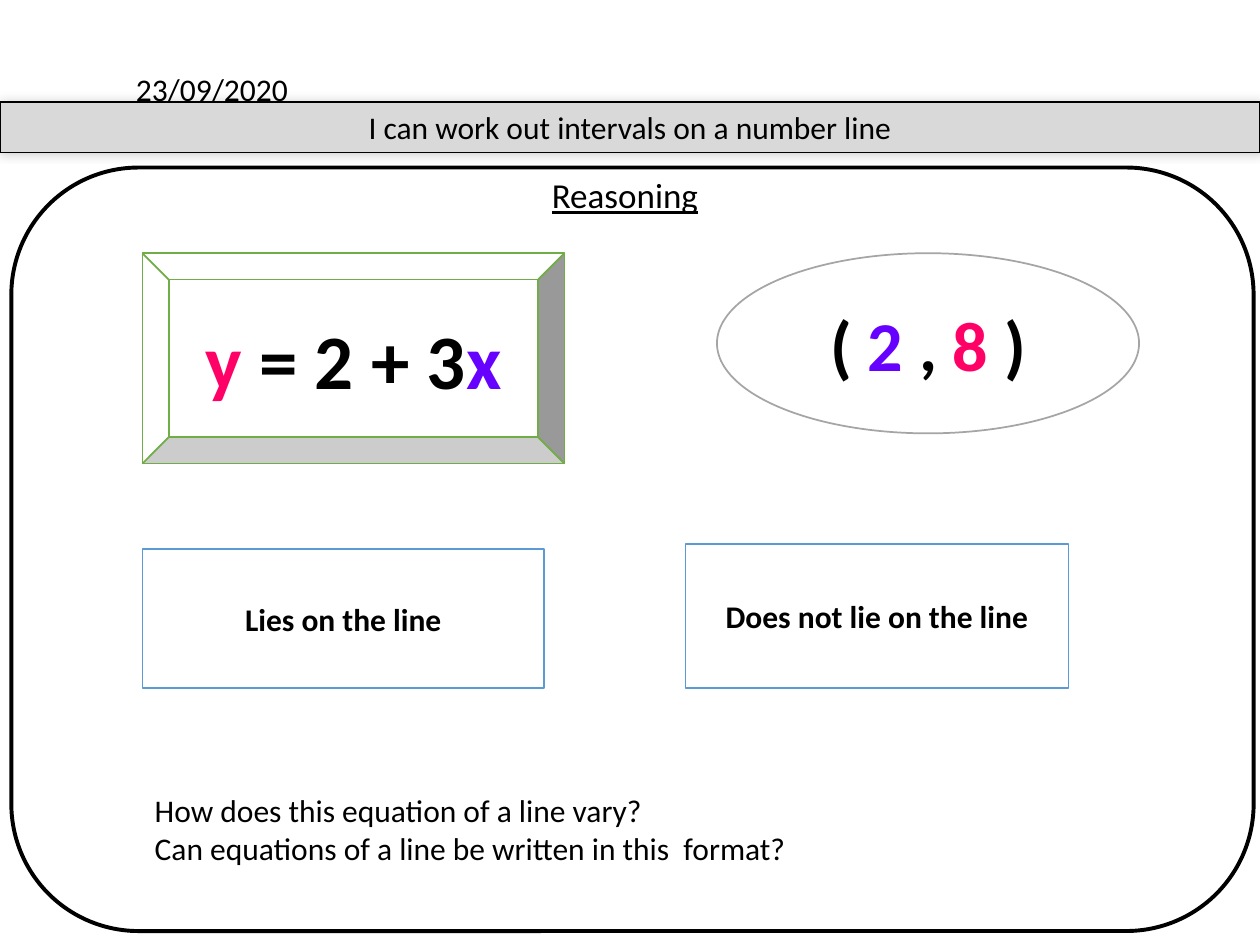
import pptx
import pptx.util
import pptx.dml.color
import pptx.enum.shapes
import pptx.enum.text
import pptx.oxml
import pptx.oxml.ns
from dataclasses import dataclass

Inches = pptx.util.Inches
Pt = pptx.util.Pt
Shape = pptx.enum.shapes.MSO_SHAPE
Align = pptx.enum.text.PP_ALIGN
Anchor = pptx.enum.text.MSO_ANCHOR


@dataclass(frozen=True)
class Theme:
    font: str = "Calibri"
    ink: str = "000000"
    paper: str = "FFFFFF"
    band: str = "D9D9D9"
    y_color: str = "FF0066"
    x_color: str = "6600FF"
    equation_line: str = "70AD47"
    point_line: str = "A5A5A5"
    answer_line: str = "5B9BD5"
    body: int = 18
    heading: int = 20
    point: int = 40
    equation: int = 44


class SlideBuilder:
    def __init__(self, prs, theme):
        self.theme = theme
        self.s = prs.slides.add_slide(prs.slide_layouts[6])

    def fill_text(self, sp, paragraphs, size, align=Align.LEFT, anchor=Anchor.TOP, wrap=True, **font):
        tf = sp.text_frame
        tf.word_wrap = wrap
        tf.vertical_anchor = anchor
        formats = {"name": self.theme.font, "size": Pt(size), **font}
        for i, runs in enumerate(paragraphs):
            p = tf.paragraphs[0] if i == 0 else tf.add_paragraph()
            p.alignment = align
            for text, color in runs:
                r = p.add_run()
                r.text = text
                for name, value in formats.items():
                    setattr(r.font, name, value)
                r.font.color.rgb = pptx.dml.color.RGBColor.from_string(color)

    def text(self, box, lines, size, **options):
        sp = self.s.shapes.add_textbox(*map(Inches, box))
        self.fill_text(sp, [[(line, self.theme.ink)] for line in lines], size, **options)

    def shape(self, kind, box, line, width=1, fill=None):
        sp = self.s.shapes.add_shape(kind, *map(Inches, box))
        sp.shadow.inherit = False
        if fill:
            sp.fill.solid()
            sp.fill.fore_color.rgb = pptx.dml.color.RGBColor.from_string(fill)
        else:
            sp.fill.background()
        sp.line.color.rgb = pptx.dml.color.RGBColor.from_string(line)
        sp.line.width = Pt(width)
        return sp

    def card(self, kind, box, line, runs, size):
        sp = self.shape(kind, box, line, fill=self.theme.paper)
        self.fill_text(sp, [runs], size, Align.CENTER, Anchor.MIDDLE, False, bold=True)

    def band(self, box, text):
        t = self.theme
        sp = self.shape(Shape.RECTANGLE, box, t.ink, 0.75, t.band)
        effects = sp._element.spPr.find(pptx.oxml.ns.qn("a:effectLst"))
        effects.append(pptx.oxml.parse_xml(
            f'<a:outerShdw {pptx.oxml.ns.nsdecls("a")} blurRad="{Pt(6)}" dist="0" dir="18900000">'
            f'<a:srgbClr val="{t.ink}"><a:alpha val="20000"/></a:srgbClr></a:outerShdw>'))
        self.fill_text(sp, [[(text, t.ink)]], t.body, Align.CENTER)


def main():
    prs = pptx.Presentation()
    prs.slide_width, prs.slide_height = Inches(10), Inches(7.5)
    t = Theme()
    b = SlideBuilder(prs, t)

    b.text((0.98, 0.51, 1.42, 0.4), ["23/09/2020"], t.body, wrap=False)
    b.text((-0.04, 1.33, 10, 0.44), ["Reasoning"], t.heading, align=Align.CENTER, underline=True)
    b.shape(Shape.ROUNDED_RECTANGLE, (0.09, 1.33, 9.86, 6.06), t.ink, 2.25)
    b.band((0, 0.81, 10, 0.4), "I can work out intervals on a number line")

    equation = [("y ", t.y_color), ("= 2 + 3", t.ink), ("x", t.x_color)]
    b.card(Shape.BEVEL, (1.13, 2.01, 3.35, 1.67), t.equation_line, equation, t.equation)
    point = [("( ", t.ink), ("2 ", t.x_color), (", ", t.ink), ("8 ", t.y_color), (")", t.ink)]
    b.card(Shape.OVAL, (5.69, 2.01, 3.35, 1.43), t.point_line, point, t.point)

    answers = [
        ("Does not lie on the line", (5.44, 4.32, 3.04, 1.14)),
        ("Lies on the line", (1.13, 4.36, 3.19, 1.1)),
    ]
    for text, box in answers:
        b.card(Shape.ACTION_BUTTON_CUSTOM, box, t.answer_line, [(text, t.ink)], t.body)

    questions = [
        "How does this equation of a line vary?",
        "Can equations of a line be written in this  format?",
    ]
    b.text((1.13, 6.23, 7.14, 0.71), questions, t.body)
    prs.save("out.pptx")


if __name__ == "__main__":
    main()
